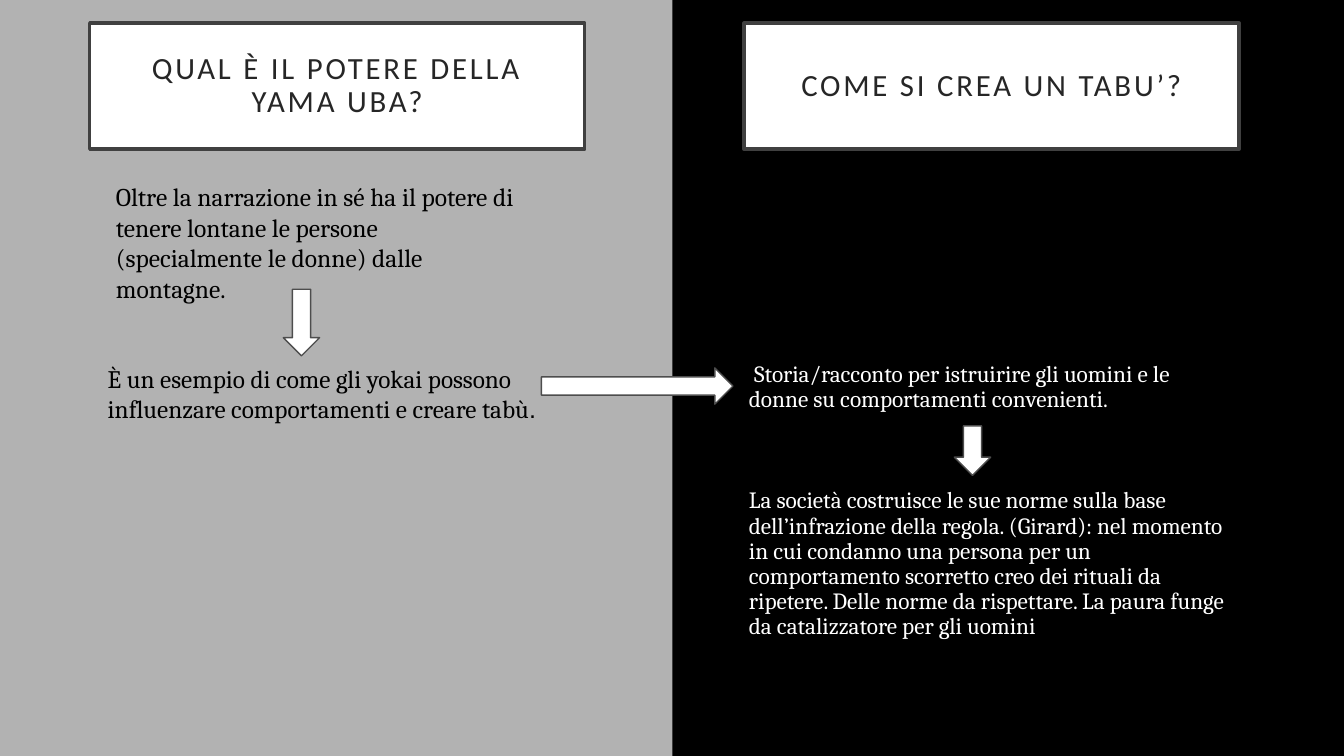
from dataclasses import dataclass

from pptx import Presentation
from pptx.dml.color import RGBColor
from pptx.enum.shapes import MSO_SHAPE as Preset
from pptx.enum.text import MSO_ANCHOR as Anchor, PP_ALIGN as Align
from pptx.util import Inches, Pt


@dataclass(frozen=True)
class Theme:
    black: str = "000000"
    white: str = "FFFFFF"
    panel: str = "B2B2B2"
    heading_text: str = "262626"
    heading_border: str = "404040"
    arrow_border: str = "4D4D4D"
    sans: str = "Calibri"
    serif: str = "Cambria"
    heading_size: float = 22
    power_size: float = 18.2
    example_size: float = 18
    taboo_size: float = 16.6


THEME = Theme()


def add_block(slide, preset, box, fill, border=None, border_width=1):
    block = slide.shapes.add_shape(preset, *map(Inches, box))
    block.shadow.inherit = False
    block.fill.solid()
    block.fill.fore_color.rgb = RGBColor.from_string(fill)
    if border:
        block.line.color.rgb = RGBColor.from_string(border)
        block.line.width = Pt(border_width)
    else:
        block.line.fill.background()
    return block


def add_run(paragraph, text, font, size, color):
    run = paragraph.add_run()
    run.text = text
    run.font.name = font
    run.font.size = Pt(size)
    run.font.color.rgb = RGBColor.from_string(color)
    return run


def add_heading(slide, left, text):
    heading = add_block(slide, Preset.RECTANGLE, (left, 0.23, 4.91, 1.25),
                        THEME.white, THEME.heading_border, 2.5)
    frame = heading.text_frame
    frame.word_wrap = True
    frame.vertical_anchor = Anchor.MIDDLE
    frame.margin_left = frame.margin_right = Inches(0.2)
    frame.margin_top = frame.margin_bottom = Inches(0.2)
    paragraph = frame.paragraphs[0]
    paragraph.alignment = Align.CENTER
    paragraph.line_spacing = 0.9
    run = add_run(paragraph, text, THEME.sans, THEME.heading_size,
                  THEME.heading_text)
    run.font._element.set("spc", "200")  # letter spacing of 2 pt


def add_passage(slide, box, runs, size, color, line_spacing=1.0):
    """Add a text box; runs is a list of (text, font) pairs."""
    frame = slide.shapes.add_textbox(*map(Inches, box)).text_frame
    frame.word_wrap = True
    paragraph = frame.paragraphs[0]
    paragraph.line_spacing = line_spacing
    for text, font in runs:
        add_run(paragraph, text, font, size, color)


def add_arrow(slide, left, top, length, rotation=0):
    arrow = add_block(slide, Preset.RIGHT_ARROW, (left, top, length, 0.36),
                      THEME.white, THEME.arrow_border)
    arrow.rotation = rotation


def main():
    prs = Presentation()
    prs.slide_width, prs.slide_height = Inches(13.33), Inches(7.5)
    slide = prs.slides.add_slide(prs.slide_layouts[6])

    # Two halves: black background, grey left panel
    slide.background.fill.solid()
    slide.background.fill.fore_color.rgb = RGBColor.from_string(THEME.black)
    add_block(slide, Preset.RECTANGLE, (0, 0, 6.67, 7.5), THEME.panel)

    # Questions
    add_heading(slide, 0.89, "QUAL È IL POTERE DELLA YAMA UBA?")
    add_heading(slide, 7.38, "COME SI CREA UN TABU’?")

    # Left: the power of the Yama Uba
    add_passage(slide, (1.05, 1.75, 4.18, 1.42), [
        ("Oltre la narrazione in sé ha il potere di tenere lontane le persone "
         "(specialmente le donne) dalle montagne.", THEME.serif),
    ], THEME.power_size, THEME.black)
    add_passage(slide, (0.97, 3.55, 4.59, 1.01), [
        ("È un esempio di come gli yokai possono influenzare comportamenti "
         "e creare tabù", THEME.serif),
        (".", "Arial"),
    ], THEME.example_size, THEME.black)

    # Right: how a taboo is made
    add_passage(slide, (7.33, 3.55, 5, 0.7), [
        (" ", THEME.sans),
        ("Storia/racconto per istruirire gli uomini e le donne su "
         "comportamenti convenienti.", THEME.serif),
    ], THEME.taboo_size, THEME.white, 0.9)
    add_passage(slide, (7.33, 4.8, 5, 1.95), [
        ("La società costruisce le sue norme sulla base dell’infrazione della "
         "regola. (Girard): nel momento in cui condanno una persona per un "
         "comportamento scorretto creo dei rituali da ripetere. Delle norme "
         "da rispettare. La paura funge da catalizzatore per gli uomini",
         THEME.serif),
    ], THEME.taboo_size, THEME.white, 0.9)

    # Arrows from one idea to the next
    add_arrow(slide, 5.37, 3.65, 1.9)
    add_arrow(slide, 2.66, 3.02, 0.66, rotation=90)
    add_arrow(slide, 9.4, 4.29, 0.49, rotation=90)

    prs.save("out.pptx")


if __name__ == "__main__":
    main()
